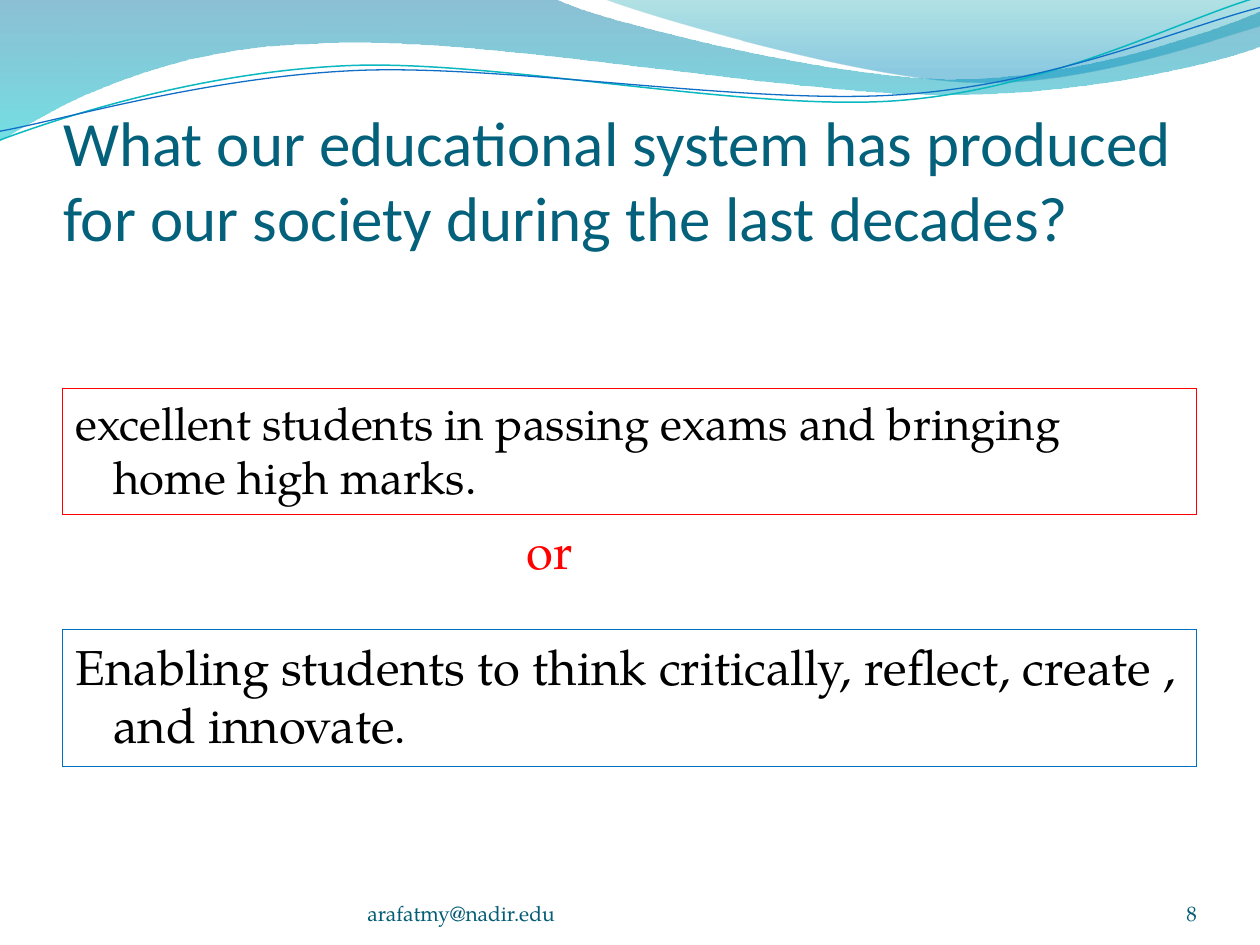
from dataclasses import dataclass

from lxml import etree
from pptx import Presentation
from pptx.dml.color import RGBColor
from pptx.enum import shapes, text
from pptx.oxml.ns import qn
from pptx.util import Pt


@dataclass(frozen=True)
class Theme:
    head: str = "Calibri"
    body: str = "TeX Gyre Pagella"
    title: str = "04617B"
    foot: str = "045D75"
    black: str = "000000"
    red: str = "FF0000"
    blue: str = "0070C0"
    teal: str = "0AB8BF"
    navy: str = "0F6FC6"
    # gradient stops: position, colour, opacity in percent
    wide: tuple = ((0, "0074A1", 45), (1, "00C6CF", 55))
    side: tuple = ((0, "00A1A9", 30), (0.8, "008BBF", 45))
    big: int = 36
    large: int = 28
    mid: int = 26
    small: int = 12


T = Theme()
FINE = 100  # outline units per point

# Each part of an outline is a line (x, y) or a curve with two controls and an end.
WIDE = [(0, 0), (317, -1),
        (343, 12, 478, 45, 546, 45), (614, 45, 690, 19, 720, 6.5),
        (721, 26),
        (708, 32, 626, 55, 537, 54), (448, 54, 275, 20, 185, 24.5),
        (93, 26, 33, 60, -0.7, 81)]
SIDE = [(345, -0.7), (366, 8, 491, 45, 554, 47), (616, 50, 692, 23, 720, 15),
        (720, 0)]
UPPER = [(0, 80), (35, 67, 114, 41, 199.5, 37.5),
         (284, 34, 427, 64, 513, 57.5), (600, 51, 675, 11, 718.5, -1.5)]
LOWER = [(0, 75), (34, 69, 118, 44, 204, 40.3),
         (290, 36.7, 430, 60.5, 516, 54), (602, 48, 677.5, 15, 720, 4.3)]


def rgb(code):
    return RGBColor.from_string(code)


def draw(slide, parts, close):
    """Build an outline through all points, then bend the curved parts."""
    first, *rest = [(round(part[i] * FINE), round(part[i + 1] * FINE))
                    for part in parts for i in range(0, len(part), 2)]
    pen = slide.shapes.build_freeform(*first, scale=Pt(1) / FINE)
    pen.add_line_segments(rest, close=close)
    shape = pen.convert_to_shape()
    shape.shadow.inherit = False
    lines = iter(list(shape._element.iter(qn("a:lnTo"))))
    for part in parts[1:]:
        bend = next(lines)
        if len(part) == 6:
            cubic = etree.Element(qn("a:cubicBezTo"))
            bend.addprevious(cubic)
            for line in (bend, next(lines), next(lines)):
                cubic.append(line[0])
                line.getparent().remove(line)
    return shape


def wave(slide, parts, stops):
    shape = draw(slide, parts, True)
    shape.line.fill.background()
    shape.fill.gradient()
    shape.fill.gradient_angle = 270
    for stop, (pos, code, _) in zip(shape.fill.gradient_stops, stops):
        stop.position = pos
        stop.color.rgb = rgb(code)
    for tone, (_, _, alpha) in zip(shape._element.spPr.iter(qn("a:srgbClr")), stops):
        etree.SubElement(tone, qn("a:alpha"), val=str(alpha * 1000))


def curve(slide, parts, code, width):
    shape = draw(slide, parts, False)
    shape.fill.background()
    shape.line.color.rgb = rgb(code)
    shape.line.width = Pt(width)


def place(shape, left, top, width, height):
    shape.left, shape.top = Pt(left), Pt(top)
    shape.width, shape.height = Pt(width), Pt(height)


def write(shape, *runs, font=T.body, size=T.mid, color=T.black, align="LEFT",
          anchor="TOP", inset=(7.2, 3.6, 7.2, 3.6), hang=0, before=0):
    """Fill a shape with one paragraph; a run is text or (text, size)."""
    frame = shape.text_frame
    frame.word_wrap = True
    frame.auto_size = text.MSO_AUTO_SIZE.NONE
    frame.vertical_anchor = text.MSO_ANCHOR[anchor]
    (frame.margin_left, frame.margin_top,
     frame.margin_right, frame.margin_bottom) = map(Pt, inset)
    para = frame.paragraphs[0]
    para.alignment = text.PP_ALIGN[align]
    para.space_before = Pt(before)
    if hang:
        props = para._p.get_or_add_pPr()
        props.set("marL", str(Pt(hang)))
        props.set("indent", str(-Pt(hang)))
    for item in runs:
        words, points = item if isinstance(item, tuple) else (item, size)
        run = para.add_run()
        run.text = words
        run.font.name = font
        run.font.size = Pt(points)
        run.font.color.rgb = rgb(color)


def label(slide, box, words, **form):
    shape = slide.shapes.add_textbox(*map(Pt, box))
    write(shape, words, **form)


def panel(slide, box, code, *runs, **form):
    shape = slide.shapes.add_shape(shapes.MSO_SHAPE.RECTANGLE, *map(Pt, box))
    shape.shadow.inherit = False
    shape.fill.background()
    shape.line.color.rgb = rgb(code)
    # Without the theme style the border keeps the default thin width
    shape._element.remove(shape._element.find(qn("p:style")))
    write(shape, *runs, hang=21.6, **form)


def main():
    deck = Presentation()
    deck.slide_width, deck.slide_height = Pt(720), Pt(540)
    slide = deck.slides.add_slide(deck.slide_layouts[5])

    # Waves along the top
    wave(slide, WIDE, T.wide)
    wave(slide, SIDE, T.side)
    curve(slide, UPPER, T.teal, 0.85)
    curve(slide, LOWER, T.navy, 0.75)

    # Title, in front of the waves
    title = slide.shapes.title
    slide.shapes._spTree.append(title._element)
    place(title, 36, 55.5, 648, 90)
    write(title, "What our educational system has produced for our society "
          "during the last decades?", font=T.head, size=T.big, color=T.title,
          anchor="BOTTOM", inset=(0, 3.6, 0, 0))

    # The two outcomes
    panel(slide, (36, 222, 648, 72), T.red,
          "excellent students in passing exams and bringing home high marks.",
          before=5.2)
    panel(slide, (36, 360, 648, 78), T.blue,
          "Enabling students to think critically, reflect, create , and innovate",
          (".", T.mid), size=T.large, before=5.6)
    label(slide, (294, 294, 102, 41), "or", size=T.large, color=T.red)

    # Footer
    foot = dict(size=T.small, color=T.foot, anchor="BOTTOM", inset=(0, 0, 0, 0))
    label(slide, (210, 500, 264, 28.8), "arafatmy@nadir.edu", **foot)
    label(slide, (624, 500, 60, 28.8), "8", align="RIGHT", **foot)

    deck.save("out.pptx")


if __name__ == "__main__":
    main()
